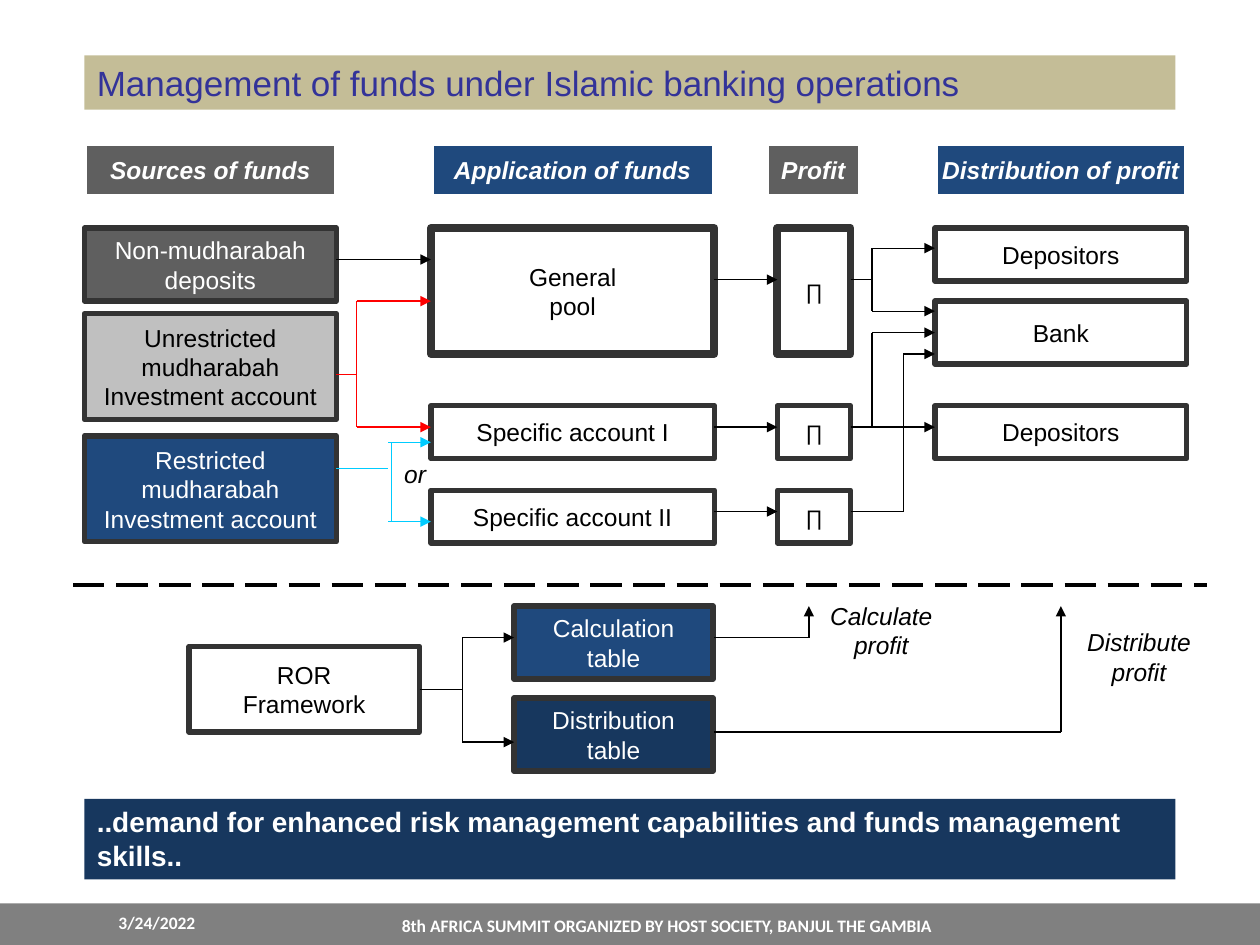
from lxml import etree
from pptx import Presentation
from pptx import util as u
from pptx.dml.color import RGBColor
from pptx.enum import dml, shapes, text
from pptx.oxml.ns import qn

I = u.Inches
BLACK, WHITE, EDGE = "000000", "FFFFFF", "333333"
GREY, BLUE, NAVY = "5F5F5F", "1F497D", "17375E"
RED, CYAN = "FF0000", "00CCFF"
LEFT, CENTER = text.PP_ALIGN.LEFT, text.PP_ALIGN.CENTER
TOP, MIDDLE = text.MSO_ANCHOR.TOP, text.MSO_ANCHOR.MIDDLE


def box(at, words="", fill=None, line=None, weight=3, color=BLACK, size=14,
        align=CENTER, anchor=MIDDLE, wrap=False, **font):
    """Add a rectangle; without fill and line it is a plain text box."""
    at = [I(v) for v in at]
    if fill or line:
        sp = s.shapes.add_shape(shapes.MSO_SHAPE.RECTANGLE, *at)
        sp.shadow.inherit = False
    else:
        sp = s.shapes.add_textbox(*at)
    if fill:
        sp.fill.solid()
        sp.fill.fore_color.rgb = RGBColor.from_string(fill)
    else:
        sp.fill.background()
    if line:
        sp.line.color.rgb = RGBColor.from_string(line)
        sp.line.width = u.Pt(weight)
    else:
        sp.line.fill.background()
    tf = sp.text_frame
    tf.text = words
    tf.word_wrap = wrap
    tf.vertical_anchor = anchor
    for p in tf.paragraphs:
        p.alignment = align
        p.font.color.rgb = RGBColor.from_string(color)
        for k, v in {"name": "Arial", "size": u.Pt(size), **font}.items():
            for r in p.runs:
                setattr(r.font, k, v)
                r.font.color.rgb = RGBColor.from_string(color)
    return sp


def route(points, color=BLACK, arrow=True, width=0.75):
    """Join the points with straight lines, the last one with an arrowhead."""
    lines = []
    for a, b in zip(points, points[1:]):
        c = s.shapes.add_connector(shapes.MSO_CONNECTOR.STRAIGHT,
                                   *(I(v) for v in (*a, *b)))
        c.line.color.rgb = RGBColor.from_string(color)
        c.line.width = u.Pt(width)
        etree.SubElement(c._element.spPr, qn("a:effectLst"))
        lines.append(c)
    if arrow:
        etree.SubElement(c.line._get_or_add_ln(), qn("a:tailEnd"), type="triangle")
    return lines


prs = Presentation()
prs.slide_width, prs.slide_height = I(10), I(7.5)
s = prs.slides.add_slide(prs.slide_layouts[6])

# Footer and the two banners
box((0, 7.17, 10, 0.33), fill="808080")
footer = dict(color=WHITE, size=10, name="Calibri", bold=True, anchor=TOP, wrap=True)
box((0.33, 7.19, 1.83, 0.25), "3/24/2022", **footer)
box((2.25, 7.21, 6.08, 0.23),
    "8th AFRICA SUMMIT ORGANIZED BY HOST SOCIETY, BANJUL THE GAMBIA", **footer)
banner = dict(align=LEFT, anchor=TOP, wrap=True)
box((0.67, 0.44, 8.66, 0.43), "Management of funds under Islamic banking operations",
    "C4BD97", color="333399", size=20, **banner)
box((0.67, 6.34, 8.66, 0.64),
    "..demand for enhanced risk management capabilities and funds management skills..",
    NAVY, color=WHITE, size=16, bold=True, **banner)

# Column headings
for x, w, words, fill in [(0.67, 2, "Sources of funds", GREY),
                          (3.42, 2.25, "Application of funds", BLUE),
                          (6.08, 0.75, "Profit", GREY),
                          (7.42, 2, "Distribution of profit", BLUE)]:
    box((x, 1.14, w, 0.42), words, fill, WHITE, color=WHITE, bold=True, italic=True)

# Sources of funds
for y, h, words, fill, color in [
        (1.81, 0.58, "Non-mudharabah\ndeposits", GREY, WHITE),
        (2.49, 0.84, "Unrestricted\vmudharabah\nInvestment account", "C0C0C0", BLACK),
        (3.46, 0.84, "Restricted\vmudharabah\nInvestment account", BLUE, WHITE)]:
    box((0.67, y, 2, h), words, fill, EDGE, color=color)

# Application of funds, each with its profit
for y, h, words, weight in [(1.81, 1, "General\npool", 4.5),
                            (3.22, 0.42, "Specific account I", 3),
                            (3.89, 0.42, "Specific account II", 3)]:
    box((3.42, y, 2.25, h), words, line=EDGE, weight=weight)
    box((6.17, y, 0.58, h), "∏", line=EDGE, weight=weight, size=12, italic=True)

# Distribution of profit
for y, h, words in [(1.81, 0.42, "Depositors"), (2.39, 0.5, "Bank"),
                    (3.22, 0.42, "Depositors")]:
    box((7.42, y, 2, h), words, line=EDGE)

# Framework
framework = box((1.5, 5.13, 1.83, 0.68), "ROR\nFramework", line=EDGE)
for y, words, fill in [(4.81, "Calculation\ntable", BLUE),
                       (5.54, "Distribution\ntable", NAVY)]:
    box((4.08, y, 1.58, 0.58), words, fill, EDGE, color=WHITE)

# Sources to application
route([(2.67, 2.06), (3.42, 2.06)])
route([(2.67, 2.97), (2.83, 2.97)], RED, arrow=False)
route([(2.83, 2.39), (2.83, 3.39)], RED, arrow=False)
route([(2.67, 3.72), (3.08, 3.72)], CYAN, arrow=False)
route([(3.11, 3.51), (3.11, 4.14)], CYAN, arrow=False)
for x, color, ys in [(2.83, RED, (2.39, 3.39)), (3.08, CYAN, (3.51, 4.14))]:
    for y in ys:
        route([(x, y), (3.42, y)], color)

# Application to profit
for y in (2.22, 3.39, 4.06):
    route([(5.67, y), (6.17, y)])

# Profit to distribution
route([(6.75, 2.22), (6.92, 2.22)], arrow=False)
for y in (1.97, 2.47):
    route([(6.92, 2.22), (6.92, y), (7.42, y)])
route([(6.75, 3.39), (7.42, 3.39)])
route([(6.92, 3.39), (6.92, 2.64), (7.42, 2.64)])
route([(6.75, 4.06), (7.17, 4.06), (7.17, 2.81), (7.42, 2.81)])

# Divider
divider = route([(0.58, 4.64), (9.58, 4.64)], arrow=False, width=2.25)[0]
divider.line.dash_style = dml.MSO_LINE.LONG_DASH

# Framework to tables, tables to profit
stem = route([(3.33, 5.47), (3.67, 5.47)], arrow=False)[0]
stem.begin_connect(framework, 3)
for y in (5.06, 5.89):
    route([(3.67, 5.47), (3.67, y), (4.08, y)])
for x, y in [(6.42, 5.06), (8.42, 5.81)]:
    route([(5.67, y), (x, y), (x, 4.81)])

# Labels
for at, words, align in [((6.33, 4.72, 1.33, 0.57), "Calculate\vprofit", CENTER),
                         ((8.5, 4.93, 1.08, 0.57), "Distribute\vprofit", CENTER),
                         ((3.11, 3.59, 0.5, 0.33), "or", LEFT)]:
    box(at, words, align=align, anchor=TOP, wrap=True, italic=True)

prs.save("out.pptx")
